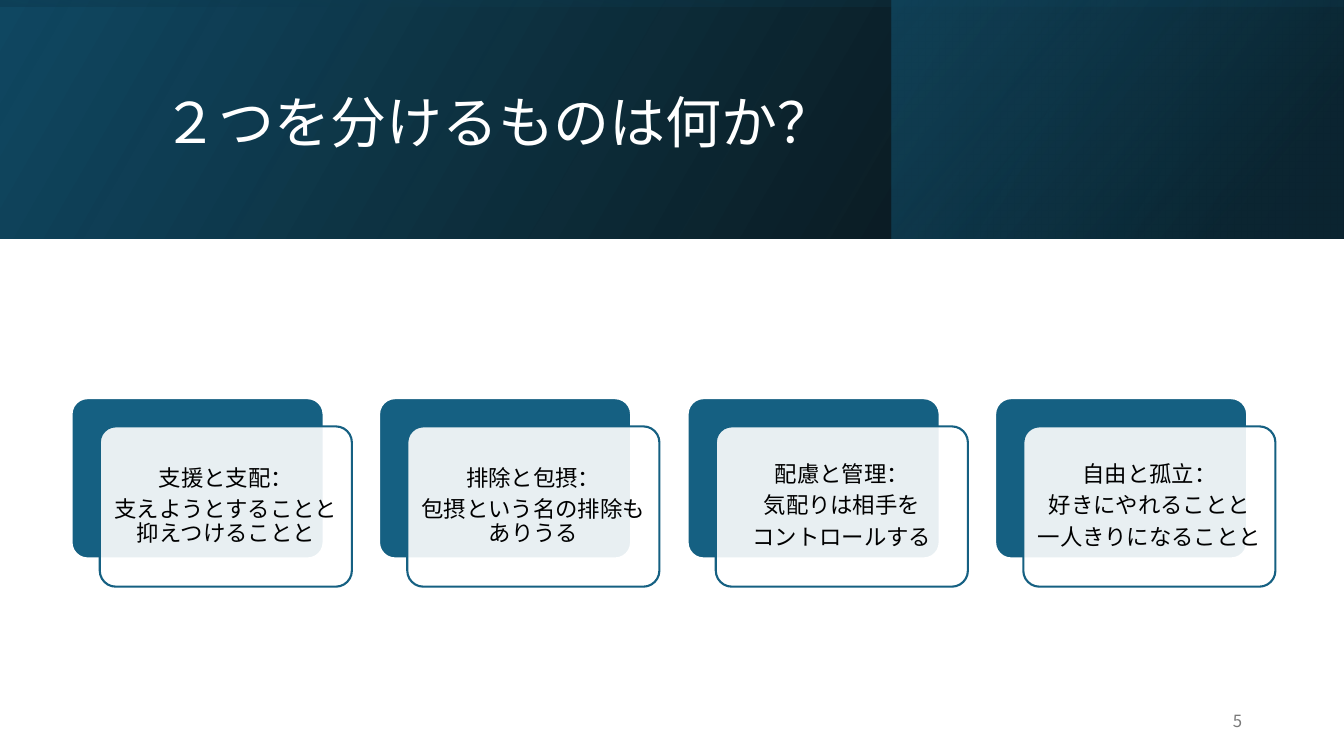
from lxml import etree
from pptx import Presentation
from pptx.dml.color import RGBColor
from pptx.enum.shapes import MSO_SHAPE
from pptx.enum.text import MSO_ANCHOR, MSO_AUTO_SIZE, PP_ALIGN
from pptx.oxml.ns import qn
from pptx.util import Emu, Pt

RECT, ROUNDED = MSO_SHAPE.RECTANGLE, MSO_SHAPE.ROUNDED_RECTANGLE
LEFT, CENTER, RIGHT = PP_ALIGN.LEFT, PP_ALIGN.CENTER, PP_ALIGN.RIGHT
MIDDLE = MSO_ANCHOR.MIDDLE
NO_AUTOFIT = MSO_AUTO_SIZE.NONE

EMU_PER_PX = 9144  # 100 px to the inch
PAGE_WIDTH, PAGE_HEIGHT = 1333, 750
TITLE_ONLY = 5
FONT = "Noto Sans CJK JP"
COLORS = {
    "white": "FFFFFF",
    "black": "000000",
    "teal": "156082",
    "deep": "104862",
    "night": "0B3041",
    "gray": "797979",
}
CARDS = [
    ["支援と支配：", "支えようとすることと抑えつけることと"],
    ["排除と包摂：", "包摂という名の排除もありうる"],
    ["配慮と管理：", "気配りは相手を", "コントロールする"],
    ["自由と孤立：", "好きにやれることと", "一人きりになることと"],
]


def px(length):
    return Emu(length * EMU_PER_PX)


def rgb(name):
    return RGBColor.from_string(COLORS[name])


def set_opacity(shape, percents):
    """Give each fill colour of the shape, in order, its opacity."""
    colors = list(shape.element.spPr.iter(qn("a:srgbClr")))
    for color, percent in zip(colors, percents):
        etree.SubElement(color, qn("a:alpha"), val=str(percent * 1000))


def add_span(para, text, size, color):
    span = para.add_run()
    span.text = text
    span.font.size = Pt(size)
    span.font.color.rgb = rgb(color)
    span.font.name = FONT
    etree.SubElement(span.font._element, qn("a:ea"), typeface=FONT)


def set_frame(shape, margin=None):
    frame = shape.text_frame
    frame.word_wrap = True
    frame.auto_size = NO_AUTOFIT
    frame.vertical_anchor = MIDDLE
    if margin is not None:
        frame.margin_left = frame.margin_right = px(margin)
        frame.margin_top = frame.margin_bottom = px(margin)
    return frame


def add_gradient(page, box, angle, stops, rotation=0):
    """Add a mirrored band; each stop is position, colour and opacity in percent."""
    band = page.shapes.add_shape(RECT, *map(px, box))
    band.shadow.inherit = False
    band.line.fill.background()
    band.rotation = rotation
    band.element.spPr.find(qn("a:xfrm")).set("flipH", "1")
    band.fill.gradient()
    band.fill.gradient_angle = 360 - angle
    for stop, (position, color, _) in zip(band.fill.gradient_stops, stops):
        stop.position = position / 100
        stop.color.rgb = rgb(color)
    set_opacity(band, [opacity for _, _, opacity in stops])


def add_header(page, box, text):
    left, top, width, height = box
    side = 448
    add_gradient(page, box, 330, [(0, "black", 96), (100, "deep", 100)])
    add_gradient(page, (left + width - side - 1, top, side, height), 320,
                 [(19, "night", 68), (100, "teal", 48)])
    turned = (left + (width - height) // 2, top - (width - height) // 2, height, width)
    add_gradient(page, turned, 350, [(23, "deep", 16), (99, "black", 45)], rotation=270)

    title = page.shapes.title
    title.left, title.top = px(left + 151), px(top + 38)
    title.width, title.height = px(1063), px(172)
    title.element.getparent().append(title.element)  # in front of the bands
    para = set_frame(title).paragraphs[0]
    para.alignment = LEFT
    para.line_spacing = 0.9
    add_span(para, text, 40, "white")


def add_panel(group, box, fill, line):
    panel = group.shapes.add_shape(ROUNDED, *map(px, box))
    panel.adjustments[0] = 0.1
    panel.shadow.inherit = False
    panel.fill.solid()
    panel.fill.fore_color.rgb = rgb(fill)
    panel.line.color.rgb = rgb(line)
    panel.line.width = Pt(1.5)
    return panel


def add_card(page, box, lines):
    left, top, width, height = box
    shift, inset = 28, 4
    group = page.shapes.add_group_shape()
    add_panel(group, box, "teal", "white")
    front = add_panel(group, (left + shift, top + shift, width, height), "white", "teal")
    set_opacity(front, [90])
    label = group.shapes.add_textbox(
        px(left + shift + inset), px(top + shift + inset),
        px(width - 2 * inset), px(height - 2 * inset))
    frame = set_frame(label, margin=7)
    for index, line in enumerate(lines):
        para = frame.add_paragraph() if index else frame.paragraphs[0]
        para.alignment = CENTER
        para.line_spacing = Pt(17)
        para.space_after = Pt(5.6)
        add_span(para, line, 16, "black")


def add_card_row(page, box, cards):
    left, top, width, height = box
    card_width = 250
    for index, lines in enumerate(cards):
        offset = round(index * (width - card_width) / (len(cards) - 1))
        add_card(page, (left + offset, top, card_width, height), lines)


def add_page_number(page, box, number):
    para = set_frame(page.shapes.add_textbox(*map(px, box))).paragraphs[0]
    para.alignment = RIGHT
    add_span(para, number, 12, "gray")


def main():
    deck = Presentation()
    deck.slide_width, deck.slide_height = px(PAGE_WIDTH), px(PAGE_HEIGHT)
    page = deck.slides.add_slide(deck.slide_layouts[TITLE_ONLY])
    add_header(page, (0, 0, PAGE_WIDTH, 237), "２つを分けるものは何か？")
    add_card_row(page, (71, 395, 1166, 159), CARDS)
    add_page_number(page, (942, 695, 300, 40), "5")
    deck.save("out.pptx")


if __name__ == "__main__":
    main()
